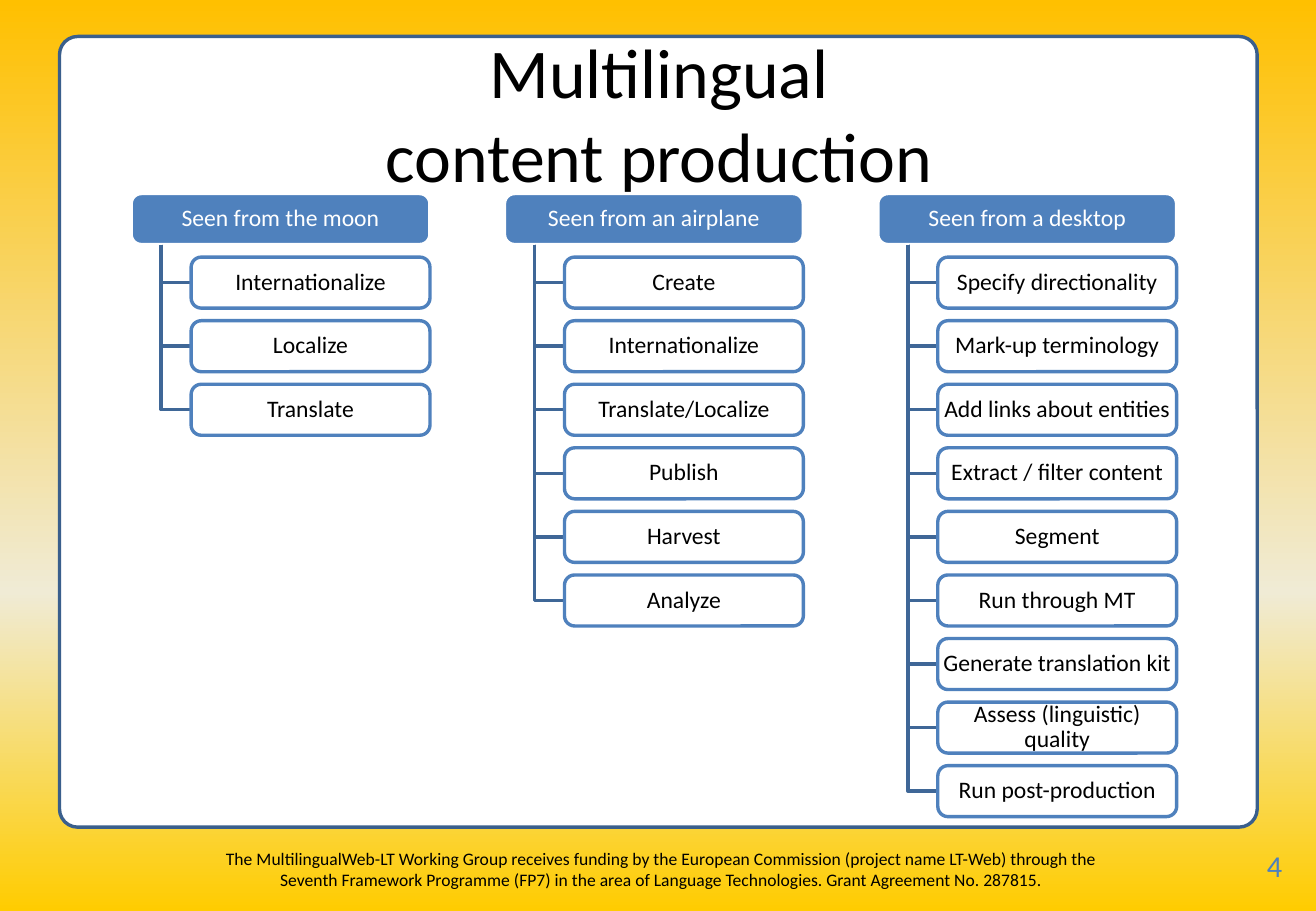
import dataclasses

import lxml.etree
import pptx
import pptx.dml.color
import pptx.enum.shapes
import pptx.enum.text
import pptx.oxml.ns
import pptx.util

PX = 3048
WIDE, HIGH = 3250, 2250
FONT = "Calibri"
COLORS = {
    "white": "FFFFFF",
    "black": "000000",
    "blue": "4F81BD",
    "frame": "3A5F8C",
    "branch": "3F6797",
}
SKY = [(0, "FFC000"), (65, "F0EBD5"), (100, "FFCC00")]

LEFT, TOP = 324, 478
HEAD_W, BOX_H = 738, 126
COL_STEP, ROW_STEP = 922, 157
STEM, INDENT = 74, 148

Align = pptx.enum.text.PP_ALIGN
Anchor = pptx.enum.text.MSO_ANCHOR


@dataclasses.dataclass
class View:
    name: str
    steps: list[str]


VIEWS = [
    View("Seen from the moon", ["Internationalize", "Localize", "Translate"]),
    View("Seen from an airplane", [
        "Create", "Internationalize", "Translate/Localize",
        "Publish", "Harvest", "Analyze",
    ]),
    View("Seen from a desktop", [
        "Specify directionality", "Mark-up terminology",
        "Add links about entities", "Extract / filter content", "Segment",
        "Run through MT", "Generate translation kit",
        "Assess (linguistic) quality", "Run post-production",
    ]),
]


def px(n: int) -> pptx.util.Emu:
    return pptx.util.Emu(n * PX)


def color(name: str) -> pptx.dml.color.RGBColor:
    return pptx.dml.color.RGBColor.from_string(COLORS[name])


def write(shape, text: str, *, size: float, ink: str = "black",
          align=Align.CENTER, anchor=Anchor.MIDDLE,
          pad: tuple[int, int] = (30, 15), space: float = 1.0) -> None:
    frame = shape.text_frame
    frame.word_wrap = True
    frame.vertical_anchor = anchor
    frame.margin_left = frame.margin_right = px(pad[0])
    frame.margin_top = frame.margin_bottom = px(pad[1])
    para = frame.paragraphs[0]
    para.text = text
    para.alignment = align
    para.line_spacing = space
    para.font.name = FONT
    para.font.size = pptx.util.Pt(size)
    para.font.color.rgb = color(ink)


def label(slide, x: int, y: int, w: int, h: int, text: str, **style) -> None:
    write(slide.shapes.add_textbox(px(x), px(y), px(w), px(h)), text, **style)


def edge_line(shape, name: str) -> None:
    shape.shadow.inherit = False
    shape.line.color.rgb = color(name)
    shape.line.width = pptx.util.Pt(2)


def panel(slide, x: int, y: int, w: int, h: int, *,
          fill: str, edge: str, curve: float):
    kind = pptx.enum.shapes.MSO_SHAPE.ROUNDED_RECTANGLE
    shape = slide.shapes.add_shape(kind, px(x), px(y), px(w), px(h))
    shape.adjustments[0] = curve
    shape.fill.solid()
    shape.fill.fore_color.rgb = color(fill)
    edge_line(shape, edge)
    return shape


def box(slide, x: int, y: int, w: int, text: str, *,
        fill: str, edge: str, ink: str) -> None:
    shape = panel(slide, x, y, w, BOX_H, fill=fill, edge=edge, curve=0.2)
    write(shape, text, size=14, ink=ink, pad=(4, 6), space=0.9)


def elbow(slide, x1: int, y1: int, x2: int, y2: int) -> None:
    pen = slide.shapes.build_freeform(x1, y1, scale=PX)
    pen.add_line_segments([(x1, y2), (x2, y2)], close=False)
    shape = pen.convert_to_shape()
    shape.fill.background()
    edge_line(shape, "branch")


def column(slide, x: int, view: View) -> None:
    box(slide, x, TOP, HEAD_W, view.name,
        fill="blue", edge="white", ink="white")
    for row, step in enumerate(view.steps, 1):
        y = TOP + row * ROW_STEP
        elbow(slide, x + STEM, TOP + BOX_H, x + INDENT, y + BOX_H // 2)
        box(slide, x + INDENT, y, HEAD_W - INDENT, step,
            fill="white", edge="blue", ink="black")


def paint(slide) -> None:
    fill = slide.background.fill
    fill.gradient()
    fill.gradient_angle = 270
    stops = slide.element.xpath(".//a:gsLst")[0]
    for old in list(stops):
        stops.remove(old)
    qn = pptx.oxml.ns.qn
    for part, tint in SKY:
        stop = lxml.etree.SubElement(stops, qn("a:gs"), pos=str(part * 1000))
        lxml.etree.SubElement(stop, qn("a:srgbClr"), val=tint)


def main() -> None:
    deck = pptx.Presentation()
    deck.slide_width, deck.slide_height = px(WIDE), px(HIGH)
    slide = deck.slides.add_slide(deck.slide_layouts[6])
    paint(slide)
    panel(slide, 147, 90, 2958, 1953,
          fill="white", edge="frame", curve=0.023)
    label(slide, 487, 2079, 2292, 120,
          "The MultilingualWeb-LT Working Group receives funding by the "
          "European Commission (project name LT-Web) through the Seventh "
          "Framework Programme (FP7) in the area of Language Technologies. "
          "Grant Agreement No. 287815.",
          size=10.4, anchor=Anchor.TOP)
    label(slide, 153, 90, 2949, 375, "Multilingual\vcontent production",
          size=41.4)
    for place, view in enumerate(VIEWS):
        column(slide, LEFT + place * COL_STEP, view)
    label(slide, 3123, 2089, 126, 120, "4", size=18, ink="blue",
          align=Align.LEFT, anchor=Anchor.TOP, pad=(6, 3))
    deck.save("out.pptx")


if __name__ == "__main__":
    main()
